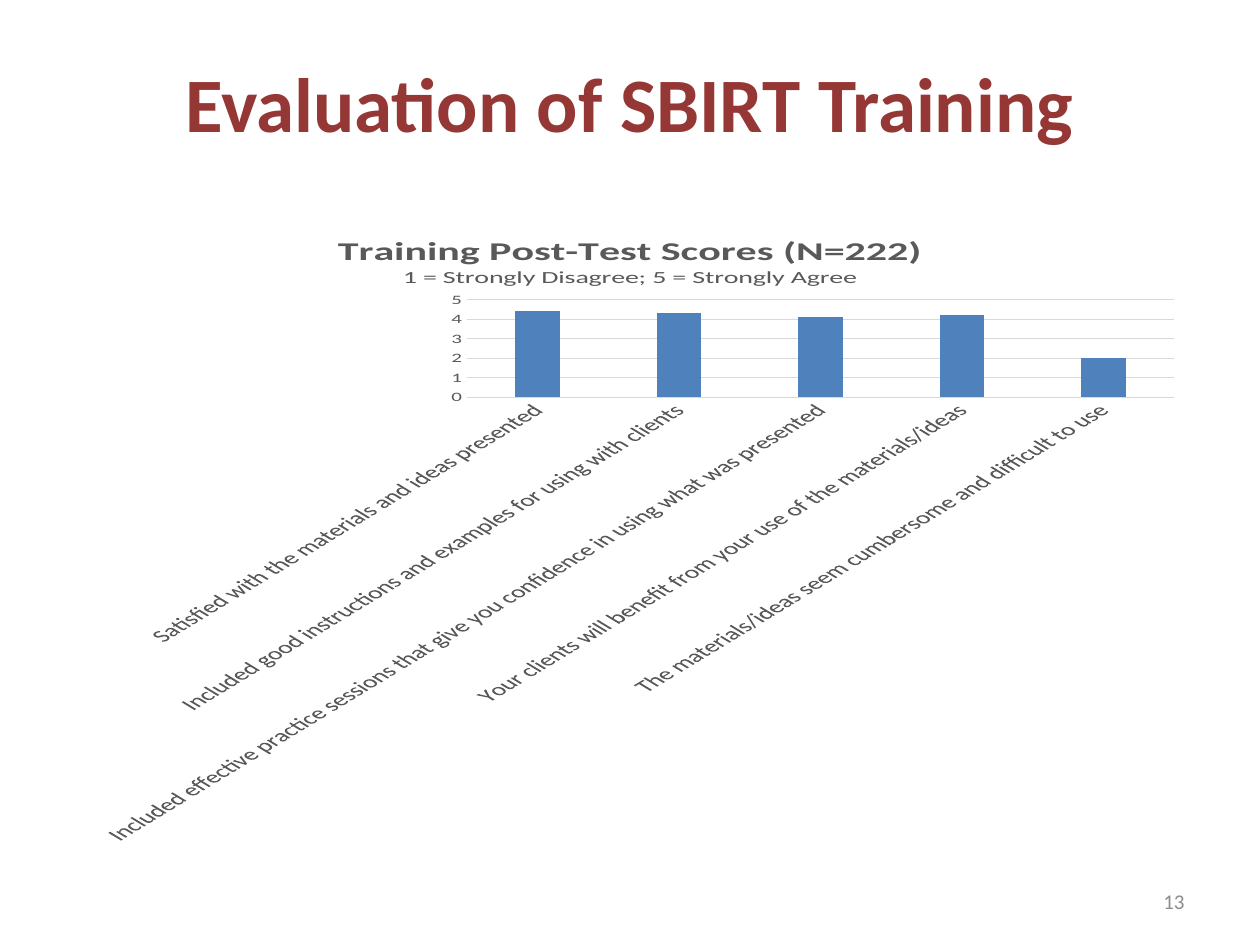
from pptx import Presentation
from pptx.chart.data import CategoryChartData
from pptx.dml.color import RGBColor
from pptx.enum.chart import XL_CHART_TYPE as CT, XL_TICK_MARK as TM
from pptx.enum.text import MSO_ANCHOR as ANCHOR, PP_ALIGN as AL
from pptx.util import Pt

EMU_PER_PX = 914400 / 126
SCORES = {
    "Satisfied with the materials and ideas presented": 4.4,
    "Included good instructions and examples for using with clients": 4.3,
    "Included effective practice sessions that give you confidence in using what was presented": 4.1,
    "Your clients will benefit from your use of the materials/ideas": 4.2,
    "The materials/ideas seem cumbersome and difficult to use": 2,
}


def px(n):
    return round(n * EMU_PER_PX)


def rgb(value):
    return RGBColor.from_string(value)


def set_font(font, size, color, bold=False):
    font.name = "Calibri"
    font.size = Pt(size)
    font.bold = bold
    font.color.rgb = rgb(color)


def write(p, text, size=12, color="000000", bold=False, align=AL.CENTER):
    p.alignment = align
    r = p.add_run()
    r.text = text
    set_font(r.font, size, color, bold)


class Deck:
    heading = "953735"
    muted = "8C8C8C"
    label = "595959"
    rule = "D9D9D9"
    bar = "4F81BD"

    def __init__(self, width, height):
        self.prs = Presentation()
        self.prs.slide_width = px(width)
        self.prs.slide_height = px(height)
        self.s = self.prs.slides.add_slide(self.prs.slide_layouts[5])

    def title(self, text, x, y, w, h):
        sp = self.s.shapes.title
        sp.left, sp.top, sp.width, sp.height = map(px, (x, y, w, h))
        tf = sp.text_frame
        tf.vertical_anchor = ANCHOR.MIDDLE
        write(tf.paragraphs[0], text, size=44, color=self.heading, bold=True)

    def text(self, text, x, y, w, h, **fmt):
        tf = self.s.shapes.add_textbox(*map(px, (x, y, w, h))).text_frame
        tf.word_wrap = True
        tf.vertical_anchor = ANCHOR.MIDDLE
        write(tf.paragraphs[0], text, **fmt)

    def line(self, fmt):
        fmt.line.color.rgb = rgb(self.rule)
        fmt.line.width = Pt(0.75)

    def column_chart(self, scores, heading, note, x, y, w, h):
        data = CategoryChartData()
        data.categories = list(scores)
        data.add_series("Series 1", list(scores.values()))
        frame = self.s.shapes.add_chart(CT.COLUMN_CLUSTERED, *map(px, (x, y, w, h)), data)
        chart = frame.chart
        set_font(chart.font, 10, "000000")
        chart.has_legend = False
        tf = chart.chart_title.text_frame
        write(tf.paragraphs[0], heading, size=24, color=self.label, bold=True)
        write(tf.add_paragraph(), note, size=16, color=self.label)
        chart.chart_title.include_in_layout = False

        plot = chart.plots[0]
        plot.gap_width, plot.overlap = 219, -27
        plot.vary_by_categories = False
        fill = plot.series[0].format.fill
        fill.solid()
        fill.fore_color.rgb = rgb(self.bar)

        cat, val = chart.category_axis, chart.value_axis
        for axis, size in ((cat, 16), (val, 12)):
            axis.major_tick_mark = axis.minor_tick_mark = TM.NONE
            set_font(axis.tick_labels.font, size, self.label)
        self.line(cat.format)
        cat.tick_labels.font._element.getparent().getparent().getparent().bodyPr.set("rot", "-2700000")
        val.format.line.fill.background()
        val.minimum_scale, val.maximum_scale, val.major_unit = 0, 5, 1
        self.line(val.major_gridlines.format)


def main():
    deck = Deck(1260, 945)
    deck.title("Evaluation of SBIRT Training", 63, 23, 1134, 158)
    deck.column_chart(SCORES, "Training Post-Test Scores (N=222)",
                      "1 = Strongly Disagree; 5 = Strongly Agree", 63, 221, 1134, 624)
    deck.text("13", 903, 876, 294, 50, color=deck.muted, align=AL.RIGHT)
    deck.prs.save("out.pptx")


if __name__ == "__main__":
    main()
